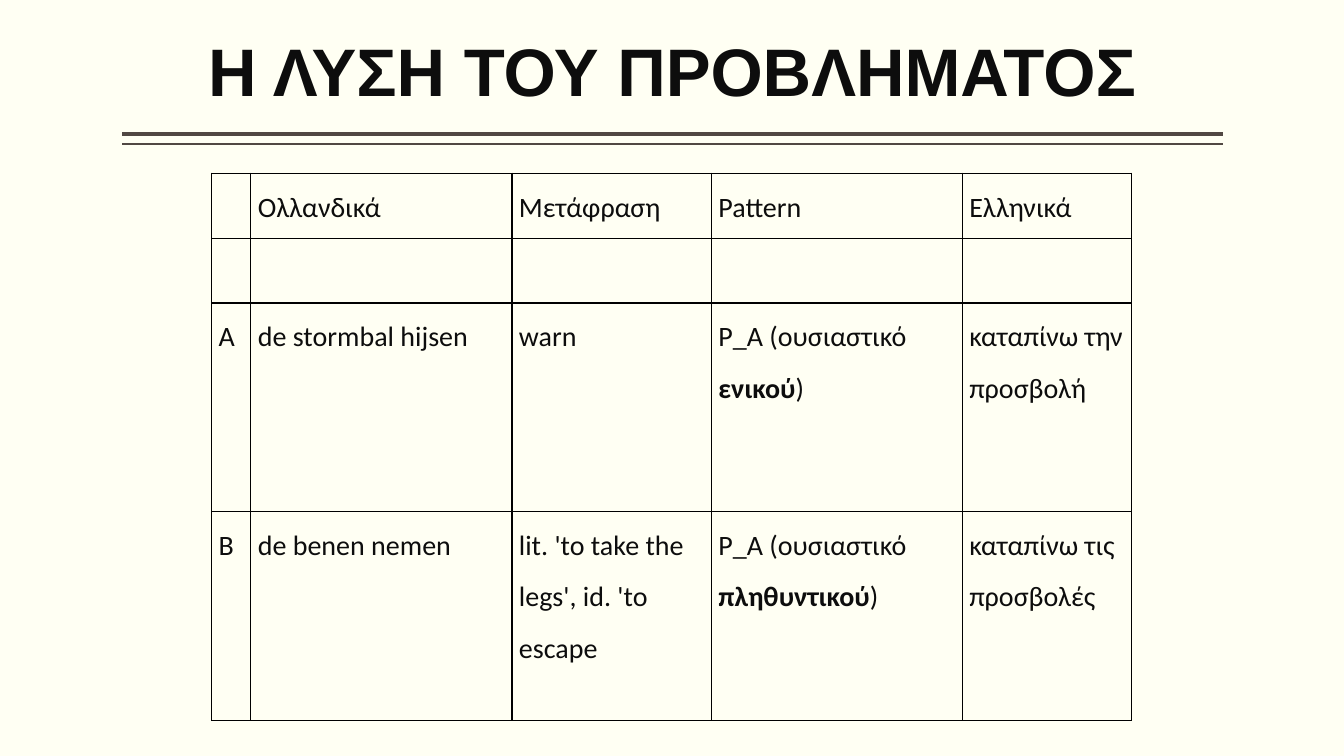
"""Build the slide that presents the solution as a table of Dutch and Greek idioms."""
from dataclasses import dataclass

from lxml import etree
from pptx import Presentation
from pptx import util as u
from pptx.dml.color import RGBColor
from pptx.enum import shapes, text
from pptx.oxml import ns

BACKGROUND = "FFFFF3"
INK = "0D0D0D"
RULE_COLOR = "514843"
BORDER_COLOR = "000000"
CONTENT_LEFT, CONTENT_WIDTH = 87.1, 786.3
TABLE_LEFT, TABLE_TOP = 151.2, 123.7
COLUMN_WIDTHS = (28, 186.5, 142.5, 179.2, 121)
ROW_HEIGHTS = (46.4, 46.4, 149, 149)
BOLD_MARK = "*"
CELL_TEXTS = (
    ("", "Ολλανδικά", "Μετάφραση", "Pattern", "Ελληνικά"),
    ("", "", "", "", ""),
    ("A", "de stormbal hijsen", "warn",
     "Ρ_Α (ουσιαστικό *ενικού*)", "καταπίνω την προσβολή"),
    ("B", "de benen nemen", "lit. 'to take the legs', id. 'to escape",
     "Ρ_Α (ουσιαστικό *πληθυντικού*)", "καταπίνω τις προσβολές"),
)


@dataclass(frozen=True)
class Rule:
    top: float
    weight: float


RULES = (Rule(95.8, 3), Rule(102.8, 1))


def color(value: str) -> RGBColor:
    return RGBColor.from_string(value)


def style_font(font, name: str, size: float, bold: bool) -> None:
    font.name = name
    font.size = u.Pt(size)
    font.bold = bold
    font.color.rgb = color(INK)


def format_title(title) -> None:
    title.left, title.top = u.Pt(CONTENT_LEFT), u.Pt(5.8)
    title.width, title.height = u.Pt(CONTENT_WIDTH), u.Pt(77)
    frame = title.text_frame
    frame.text = "Η ΛΥΣΗ ΤΟΥ ΠΡΟΒΛΗΜΑΤΟΣ"
    frame.word_wrap = True
    frame.auto_size = text.MSO_AUTO_SIZE.NONE
    frame.vertical_anchor = text.MSO_ANCHOR.BOTTOM
    frame.margin_left = frame.margin_right = 0
    frame.margin_top = frame.margin_bottom = u.Pt(3.6)
    paragraph = frame.paragraphs[0]
    paragraph.alignment = text.PP_ALIGN.CENTER
    paragraph.line_spacing = 0.9
    style_font(paragraph.runs[0].font, "Arial", 48, True)


def draw_rule(slide, rule: Rule) -> None:
    connector = slide.shapes.add_connector(
        shapes.MSO_CONNECTOR.STRAIGHT,
        u.Pt(CONTENT_LEFT + CONTENT_WIDTH), u.Pt(rule.top),
        u.Pt(CONTENT_LEFT), u.Pt(rule.top))
    connector.line.color.rgb = color(RULE_COLOR)
    connector.line.width = u.Pt(rule.weight)
    properties = connector._element.find(ns.qn("p:spPr"))
    etree.SubElement(properties, ns.qn("a:effectLst"))


def add_borders(cell) -> None:
    properties = cell._tc.get_or_add_tcPr()
    for side in ("lnL", "lnR", "lnT", "lnB"):
        border = etree.SubElement(properties, ns.qn(f"a:{side}"), w=str(u.Pt(1)))
        fill = etree.SubElement(border, ns.qn("a:solidFill"))
        etree.SubElement(fill, ns.qn("a:srgbClr"), val=BORDER_COLOR)


def fill_cell(cell, content: str) -> None:
    add_borders(cell)
    cell.fill.background()
    cell.margin_left = cell.margin_right = u.Pt(5)
    cell.margin_top = cell.margin_bottom = 0
    paragraph = cell.text_frame.paragraphs[0]
    paragraph.line_spacing = 1.5
    if not content:
        style_font(paragraph.font, "Calibri", 20, False)
        return
    for index, part in enumerate(content.split(BOLD_MARK)):
        run = paragraph.add_run()
        run.text = part
        style_font(run.font, "Calibri", 20, index % 2 == 1)


def draw_table(slide) -> None:
    table = slide.shapes.add_table(
        len(ROW_HEIGHTS), len(COLUMN_WIDTHS), u.Pt(TABLE_LEFT), u.Pt(TABLE_TOP),
        u.Pt(sum(COLUMN_WIDTHS)), u.Pt(sum(ROW_HEIGHTS))).table
    table.first_row = table.horz_banding = False
    for column, width in zip(table.columns, COLUMN_WIDTHS):
        column.width = u.Pt(width)
    for row, height, contents in zip(table.rows, ROW_HEIGHTS, CELL_TEXTS):
        row.height = u.Pt(height)
        for cell, content in zip(row.cells, contents):
            fill_cell(cell, content)


def main() -> None:
    presentation = Presentation()
    presentation.slide_width, presentation.slide_height = u.Pt(960), u.Pt(540)
    slide = presentation.slides.add_slide(presentation.slide_layouts[5])
    slide.background.fill.solid()
    slide.background.fill.fore_color.rgb = color(BACKGROUND)
    for rule in RULES:
        draw_rule(slide, rule)
    format_title(slide.shapes.title)
    draw_table(slide)
    presentation.save("out.pptx")


if __name__ == "__main__":
    main()
